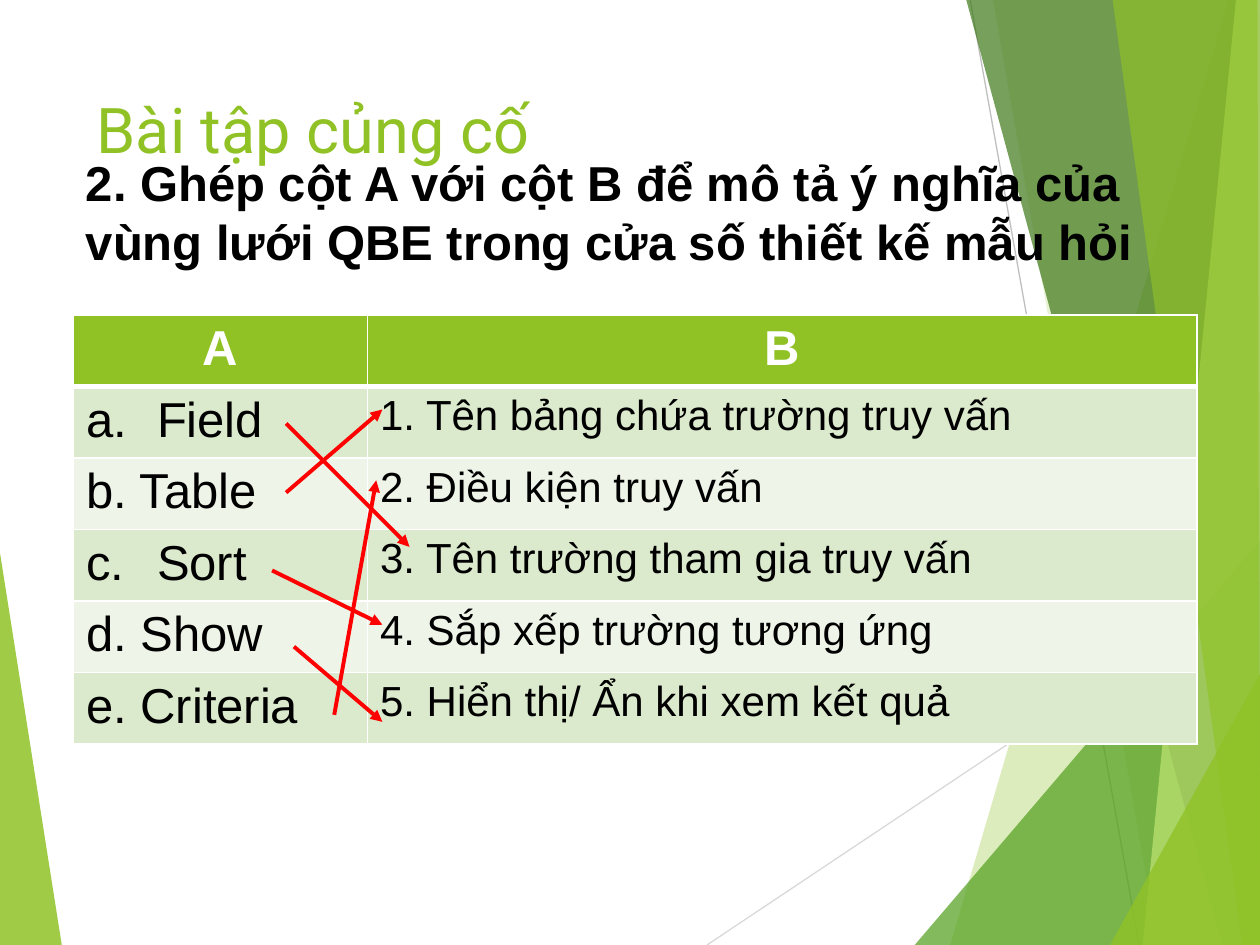
from pptx import Presentation
from pptx.dml.color import RGBColor
from pptx.enum.shapes import MSO_CONNECTOR
from pptx.enum.text import MSO_ANCHOR, MSO_AUTO_SIZE, PP_ALIGN
from pptx.oxml.ns import qn
from pptx.util import Pt
from lxml import etree

STRAIGHT = MSO_CONNECTOR.STRAIGHT
LEFT, CENTER = PP_ALIGN.LEFT, PP_ALIGN.CENTER
TOP = MSO_ANCHOR.TOP
NO_FIT = MSO_AUTO_SIZE.NONE

GREEN = RGBColor(0x90, 0xC2, 0x26)
LEAF = RGBColor(0x54, 0xA0, 0x21)
FOREST = RGBColor(0x3F, 0x78, 0x19)
LIME = RGBColor(0xC0, 0xE4, 0x74)
BAND_DARK = RGBColor(0xDB, 0xE9, 0xCD)
BAND_LIGHT = RGBColor(0xEE, 0xF4, 0xE8)
WHITE = RGBColor(0xFF, 0xFF, 0xFF)
BLACK = RGBColor(0, 0, 0)
RED = RGBColor(0xFF, 0, 0)
GREY = RGBColor(0xBF, 0xBF, 0xBF)
PALE_GREY = RGBColor(0xD9, 0xD9, 0xD9)

W, H = 720, 540

FACETS = [
    ([(0, 316), (35.3, H), (0, H)], GREEN, 85),
    ([(702, 0), (543, H), (W, H), (W, 0)], GREEN, 30),
    ([(567.4, 0), (661.7, H), (W, H), (W, 0)], GREEN, 20),
    ([(522.7, H), (W, 309), (W, H)], LEAF, 72),
    ([(552.2, 0), (698.4, H), (W, H), (W, 0)], FOREST, 70),
    ([(706.3, 0), (653, H), (W, H), (W, 0)], LIME, 70),
    ([(635.8, 0), (710, H), (W, H), (718.6, 0)], GREEN, 65),
    ([(634.3, H), (W, 385.2), (W, H)], GREEN, 80),
]
RAYS = [((404, H), (W, 329), PALE_GREY), ((554.4, 0), (651, H), GREY)]

ROWS = [
    ("Field", "1. Tên bảng chứa trường truy vấn"),
    ("b. Table", "2. Điều kiện truy vấn"),
    ("Sort", "3. Tên trường tham gia truy vấn"),
    ("d. Show", "4. Sắp xếp trường tương ứng"),
    ("e. Criteria", "5. Hiển thị/ Ẩn khi xem kết quả"),
]
NUMBERED = {"Field": 1, "Sort": 3}

MATCHES = [
    ((121.5, 62), (192, 132.5)),
    ((121.5, 101.5), (176.5, 54)),
    ((113.5, 146), (176.5, 177)),
    ((126, 189.5), (176.5, 232.5)),
    ((149, 228.5), (173, 94.5)),
]


def write(tf, text, size=28, font="Arial", color=BLACK, bold=False, align=LEFT):
    tf.word_wrap = True
    p = tf.paragraphs[0]
    p.alignment = align
    r = p.add_run()
    r.text = text
    r.font.size = Pt(size)
    r.font.name = font
    r.font.bold = bold
    r.font.color.rgb = color
    return p


def add_line(s, start, end, color, width, arrow=False):
    line = s.shapes.add_connector(STRAIGHT, *map(Pt, start + end))
    line.line.color.rgb = color
    line.line.width = Pt(width)
    props = line._element.spPr
    if arrow:
        etree.SubElement(props.find(qn("a:ln")), qn("a:tailEnd"), type="triangle")
    etree.SubElement(props, qn("a:effectLst"))


def add_facet(s, points, color, opacity):
    first, *rest = [(Pt(x), Pt(y)) for x, y in points]
    builder = s.shapes.build_freeform(*first)
    builder.add_line_segments(rest, close=True)
    sp = builder.convert_to_shape()
    sp.shadow.inherit = False
    sp.line.fill.background()
    sp.fill.solid()
    sp.fill.fore_color.rgb = color
    tint = sp._element.spPr.find(qn("a:solidFill"))[0]
    etree.SubElement(tint, qn("a:alpha"), val=str(opacity * 1000))


def add_backdrop(s):
    for start, end, color in RAYS:
        add_line(s, start, end, color, 0.75)
    for facet in FACETS:
        add_facet(s, *facet)


def add_title(s, x, y, w, h):
    sp = s.shapes.title
    sp.left, sp.top, sp.width, sp.height = map(Pt, (x, y, w, h))
    tf = sp.text_frame
    tf.auto_size = NO_FIT
    tf.vertical_anchor = TOP
    write(tf, "Bài tập củng cố", size=36, font="Roboto", color=GREEN)


def add_question(s, x, y, w, h):
    sp = s.shapes.add_textbox(*map(Pt, (x, y, w, h)))
    write(sp.text_frame, "2. Ghép cột A với cột B để mô tả ý nghĩa của vùng lưới QBE "
          "trong cửa số thiết kế mẫu hỏi", bold=True)


def number(p, start):
    props = p._p.get_or_add_pPr()
    props.set("marL", str(Pt(40.5)))
    props.set("indent", str(-Pt(40.5)))
    etree.SubElement(props, qn("a:buFont"), typeface="+mj-lt")
    etree.SubElement(props, qn("a:buAutoNum"), type="alphaLcPeriod", startAt=str(start))


def style_cell(cell, color, bottom=1, top=1):
    cell.fill.solid()
    cell.fill.fore_color.rgb = color
    props = cell._tc.get_or_add_tcPr()
    for i, (side, width) in enumerate(zip("LRTB", (1, 1, top, bottom))):
        ln = etree.Element(qn(f"a:ln{side}"), w=str(Pt(width)))
        fill = etree.SubElement(ln, qn("a:solidFill"))
        etree.SubElement(fill, qn("a:srgbClr"), val=str(WHITE))
        props.insert(i, ln)


def add_matching_table(s, x, y, w, h):
    count = len(ROWS) + 1
    table = s.shapes.add_table(count, 2, *map(Pt, (x, y, w, h))).table
    table.columns[0].width = Pt(168)
    table.columns[1].width = Pt(w - 168)
    for row in table.rows:
        row.height = Pt(h / count)
    for cell, text in zip(table.rows[0].cells, "AB"):
        write(cell.text_frame, text, color=WHITE, bold=True, align=CENTER)
        style_cell(cell, GREEN, bottom=3)
    for i, texts in enumerate(ROWS, 1):
        for cell, text, size in zip(table.rows[i].cells, texts, (28, 24)):
            p = write(cell.text_frame, text, size=size)
            if text in NUMBERED:
                number(p, NUMBERED[text])
            style_cell(cell, BAND_DARK if i % 2 else BAND_LIGHT, top=3 if i == 1 else 1)
    for (x1, y1), (x2, y2) in MATCHES:
        add_line(s, (x + x1, y + y1), (x + x2, y + y2), RED, 2.25, arrow=True)


def main():
    prs = Presentation()
    prs.slide_width, prs.slide_height = Pt(W), Pt(H)
    s = prs.slides.add_slide(prs.slide_layouts[5])
    add_backdrop(s)
    add_title(s, 48, 48, 500, 104)
    add_question(s, 42, 83.5, 643, 75)
    add_matching_table(s, 42, 180, 642, 245)
    prs.save("out.pptx")


if __name__ == "__main__":
    main()
